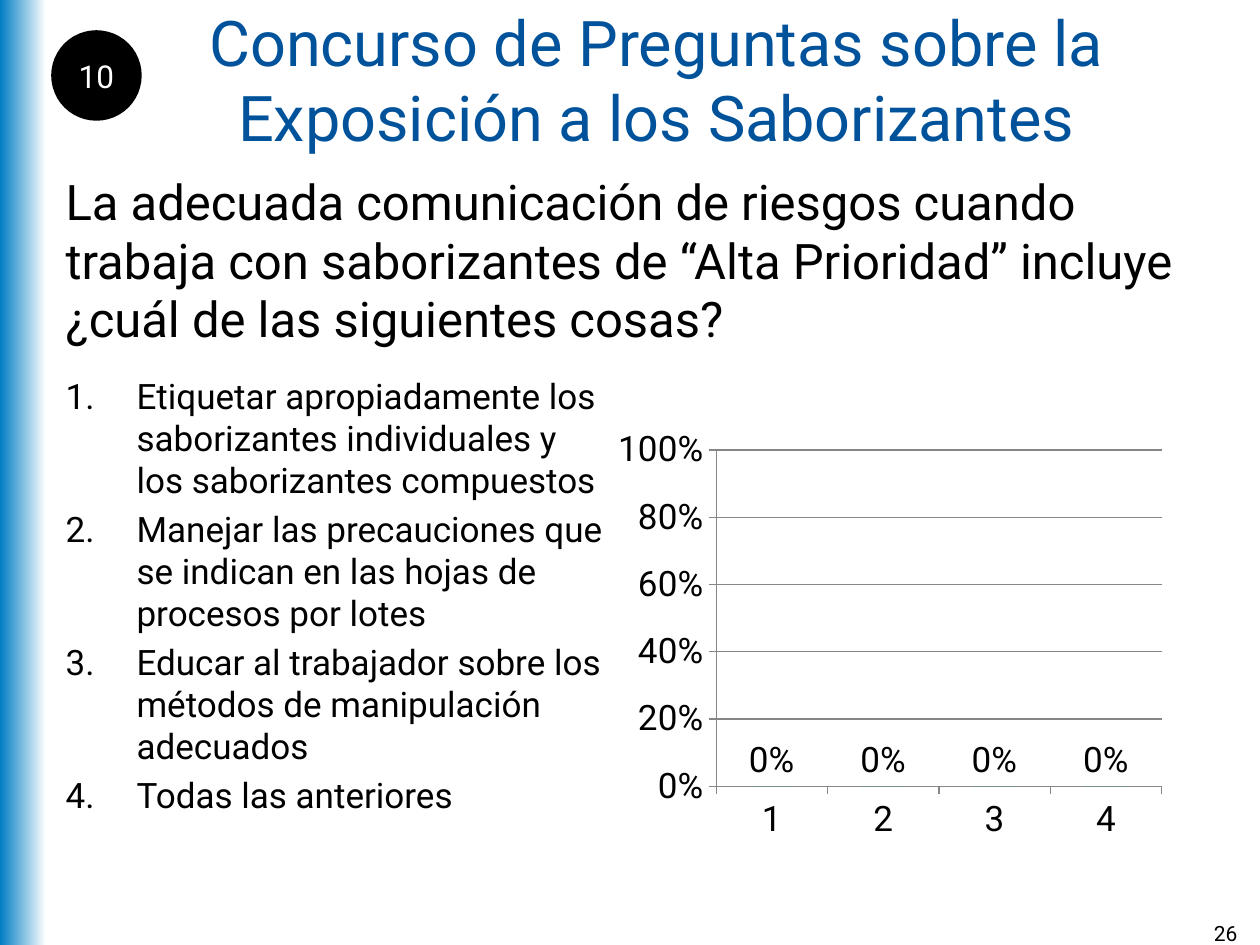
from lxml.etree import SubElement
from pptx import Presentation
from pptx.chart.data import CategoryChartData
from pptx.dml.color import RGBColor
from pptx.enum.chart import XL_CHART_TYPE as ChartType
from pptx.enum.chart import XL_LABEL_POSITION as LabelPos
from pptx.enum.chart import XL_TICK_MARK as Tick
from pptx.enum.shapes import MSO_SHAPE as Shape
from pptx.enum.text import MSO_ANCHOR as Anchor
from pptx.enum.text import MSO_AUTO_SIZE as AutoSize
from pptx.enum.text import PP_ALIGN as Align
from pptx.oxml import parse_xml
from pptx.oxml.ns import nsdecls, qn
from pptx.util import Emu, Pt

BLACK = RGBColor(0x00, 0x00, 0x00)
WHITE = RGBColor(0xFF, 0xFF, 0xFF)
TITLE_BLUE = RGBColor(0x00, 0x53, 0x9B)
BAND_BLUE = RGBColor(0x00, 0x7D, 0xC3)
BAR_GREEN = RGBColor(0x00, 0xCC, 0x99)
AXIS_GRAY = RGBColor(0x86, 0x86, 0x86)

PX_PER_INCH = 126
WIDTH, HEIGHT = 1260, 945
LIST_INDENT = 71

QUESTION = ("La adecuada comunicación de riesgos cuando trabaja con saborizantes "
            "de “Alta Prioridad” incluye ¿cuál de las siguientes cosas?")
ANSWERS = [
    "Etiquetar apropiadamente los saborizantes individuales y los saborizantes compuestos",
    "Manejar las precauciones que se indican en las hojas de procesos por lotes",
    "Educar al trabajador sobre los métodos de manipulación adecuados",
    "Todas las anteriores",
]


def px(length):
    return Emu(round(length * 914400 / PX_PER_INCH))


def set_formats(target, formats):
    for name, value in formats.items():
        setattr(target, name, value)


class QuizSlide:
    font_name = "Roboto"

    def __init__(self, slide):
        self.slide = slide

    def style_font(self, font, size, color):
        set_formats(font, {"name": self.font_name, "size": Pt(size), "bold": False})
        font.color.rgb = color

    def fill_text(self, frame, lines, size, color, align=Align.LEFT, **formats):
        set_formats(frame, {"word_wrap": True, "auto_size": AutoSize.NONE,
                            "vertical_anchor": Anchor.TOP} | formats)
        for number, line in enumerate(lines):
            paragraph = frame.paragraphs[0] if number == 0 else frame.add_paragraph()
            paragraph.alignment = align
            run = paragraph.add_run()
            run.text = line
            self.style_font(run.font, size, color)

    def placeholder(self, idx, box, lines, size, color, **formats):
        holder = self.slide.placeholders[idx]
        set_formats(holder, dict(zip(("left", "top", "width", "height"), map(px, box))))
        self.fill_text(holder.text_frame, lines, size, color, **formats)
        return holder

    def body(self, idx, box, lines, size, numbered=False):
        holder = self.placeholder(idx, box, lines, size, BLACK)
        indent = px(LIST_INDENT) if numbered else 0
        for paragraph in holder.text_frame.paragraphs:
            props = paragraph._p.get_or_add_pPr()
            props.set("marL", str(indent))
            props.set("indent", str(-indent))
            if numbered:
                SubElement(props, qn("a:buFont"), typeface="+mj-lt")
                SubElement(props, qn("a:buAutoNum"), type="arabicPeriod")
            else:
                SubElement(props, qn("a:buNone"))

    def text(self, box, line, size, **formats):
        label = self.slide.shapes.add_textbox(*map(px, box))
        self.fill_text(label.text_frame, [line], size, BLACK, **formats)

    def gradient_band(self, box, start, end):
        band = self.slide.shapes.add_shape(Shape.RECTANGLE, *map(px, box))
        band.shadow.inherit = False
        band.line.fill.background()
        band.fill.gradient()
        band.fill.gradient_angle = 0
        for stop, color in zip(band.fill.gradient_stops, (start, end)):
            stop.color.rgb = color

    def badge(self, box, line, size):
        circle = self.slide.shapes.add_shape(Shape.OVAL, *map(px, box))
        circle.shadow.inherit = False
        circle.fill.solid()
        circle.fill.fore_color.rgb = BLACK
        circle.line.color.rgb = BLACK
        circle.line.width = Pt(2)
        self.fill_text(circle.text_frame, [line], size, WHITE, Align.CENTER,
                       vertical_anchor=Anchor.MIDDLE, word_wrap=False,
                       margin_left=0, margin_top=0, margin_right=0, margin_bottom=0)

    def column_chart(self, box, categories, values, size, plot_area):
        votes = CategoryChartData(number_format="0%")
        votes.categories = categories
        votes.add_series("Series 1", values)
        chart = self.slide.shapes.add_chart(
            ChartType.COLUMN_CLUSTERED, *map(px, box), votes).chart
        set_formats(chart, {"has_legend": False, "has_title": False})
        self.style_font(chart.font, size, BLACK)

        plot = chart.plots[0]
        set_formats(plot, {"gap_width": 150, "vary_by_categories": False,
                           "has_data_labels": True})
        set_formats(plot.data_labels, {"show_value": True, "number_format": "0%",
                                       "number_format_is_linked": False,
                                       "position": LabelPos.OUTSIDE_END})
        bars = plot.series[0].format.fill
        bars.solid()
        bars.fore_color.rgb = BAR_GREEN

        scale = chart.value_axis
        set_formats(scale, {"minimum_scale": 0, "maximum_scale": 1, "major_unit": 0.2,
                            "has_major_gridlines": True})
        set_formats(scale.tick_labels, {"number_format": "0%",
                                        "number_format_is_linked": False})
        for axis in (chart.category_axis, scale):
            set_formats(axis, {"major_tick_mark": Tick.OUTSIDE, "minor_tick_mark": Tick.NONE})
        for line in (chart.category_axis.format.line, scale.format.line,
                     scale.major_gridlines.format.line):
            line.color.rgb = AXIS_GRAY
            line.width = Pt(0.75)

        # Fixed inner plot area, as fractions of the chart
        area = chart._chartSpace.chart.plotArea
        for old in area.findall(qn("c:layout")):
            area.remove(old)
        sizes = "".join(f'<c:{key} val="{value}"/>' for key, value in zip("xywh", plot_area))
        area.insert(0, parse_xml(
            f'<c:layout {nsdecls("c")}><c:manualLayout><c:layoutTarget val="inner"/>'
            f'<c:xMode val="edge"/><c:yMode val="edge"/>{sizes}'
            '</c:manualLayout></c:layout>'))


def main():
    deck = Presentation()
    deck.slide_width, deck.slide_height = px(WIDTH), px(HEIGHT)
    quiz = QuizSlide(deck.slides.add_slide(deck.slide_layouts[3]))

    # Side band and heading
    quiz.gradient_band((0, 0, 46, HEIGHT), BAND_BLUE, WHITE)
    quiz.placeholder(0, (53, 0, 1207, 158),
                     ["Concurso de Preguntas sobre la Exposición a los Saborizantes"],
                     36, TITLE_BLUE, align=Align.CENTER, vertical_anchor=Anchor.MIDDLE)
    quiz.badge((53, 32, 87, 87), "10", 18)

    # Question and answers
    quiz.body(1, (53, 165, 1155, 94), [QUESTION], 28)
    quiz.body(2, (53, 368, 564, 462), ANSWERS, 20, numbered=True)

    # Votes per answer
    choices = [str(number) for number in range(1, len(ANSWERS) + 1)]
    quiz.column_chart((609, 420, 564, 431), choices, [0] * len(choices), 20,
                      (0.19, 0.07, 0.79, 0.78))

    # Page number
    quiz.text((1187, 914, 63, 31), "26", 12, align=Align.RIGHT)

    deck.save("out.pptx")


if __name__ == "__main__":
    main()
